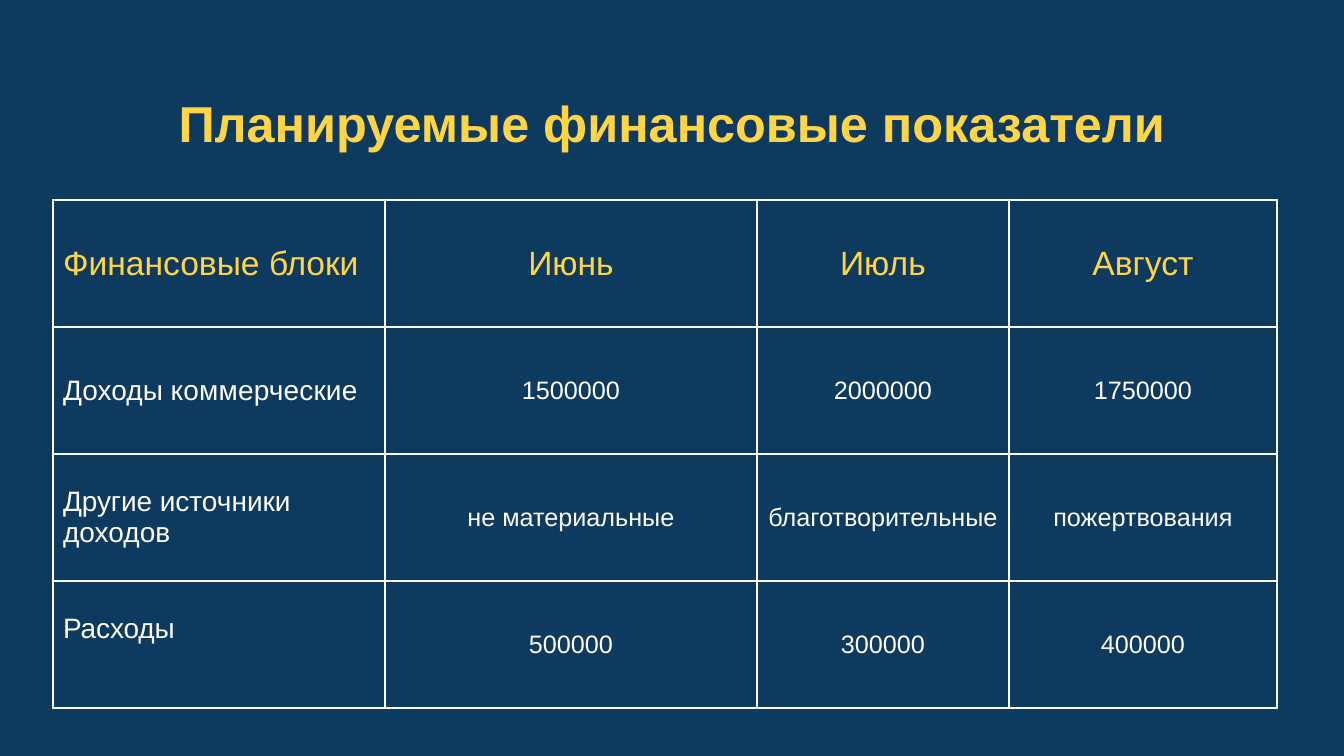
from pptx import Presentation, util as u
from pptx.dml.color import RGBColor
from pptx.enum import text
from pptx.oxml import parse_xml
from pptx.oxml.ns import nsdecls

TITLE = "Планируемые финансовые показатели"
ROWS = [
    ([("Финансовые ", 0), ("блоки", -10)], ["Июнь", "Июль", "Август"]),
    ([("Доходы ", 0), ("коммерческие", 10)], ["1500000", "2000000", "1750000"]),
    ([("Другие ", -10), ("источники доходов", 0)],
     ["не материальные", "благотворительные", "пожертвования"]),
    ([("Расходы", -10)], ["500000", "300000", "400000"]),
]
COLUMN_WIDTHS = [332, 372, 252, 268]
ROW_HEIGHT = 127
TABLE_LEFT, TABLE_TOP = 53, 200
EXPENSES_BOTTOM_MARGIN = 36
NAVY, YELLOW, WHITE = "0F3A5F", "FFD546", "FFFFFF"


def px(length):
    return u.Emu(round(length * 914400 / 100.8))


def color(value):
    return RGBColor.from_string(value)


def add_run(paragraph, words, size, ink, bold=False, spacing=0):
    run = paragraph.add_run()
    run.text = words
    run.font.name = "Arial"
    run.font.size = u.Pt(size)
    run.font.bold = bold
    run.font.color.rgb = color(ink)
    if spacing:
        run.font._element.set("spc", str(spacing))


def style_cell(cell):
    cell.vertical_anchor = text.MSO_ANCHOR.MIDDLE
    properties = cell._tc.get_or_add_tcPr()
    for side in ("lnL", "lnR", "lnT", "lnB"):
        properties.append(parse_xml(
            f'<a:{side} {nsdecls("a")} w="12700"><a:solidFill>'
            f'<a:srgbClr val="{WHITE}"/></a:solidFill></a:{side}>'))
    cell.fill.background()


deck = Presentation()
deck.slide_width, deck.slide_height = px(1344), px(756)
slide = deck.slides.add_slide(deck.slide_layouts[6])
slide.background.fill.solid()
slide.background.fill.fore_color.rgb = color(NAVY)

title = slide.shapes.add_textbox(0, px(94), px(1344), px(65)).text_frame
title.word_wrap = True
title.vertical_anchor = text.MSO_ANCHOR.MIDDLE
heading = title.paragraphs[0]
heading.alignment = text.PP_ALIGN.CENTER
heading.line_spacing = 0.9
add_run(heading, TITLE, 36, YELLOW, bold=True)

table = slide.shapes.add_table(
    len(ROWS), len(COLUMN_WIDTHS), px(TABLE_LEFT), px(TABLE_TOP),
    px(sum(COLUMN_WIDTHS)), px(ROW_HEIGHT * len(ROWS))).table
table.horz_banding = False
table.first_row = False
for column, width in zip(table.columns, COLUMN_WIDTHS):
    column.width = px(width)

for row_index, (label, months) in enumerate(ROWS):
    table.rows[row_index].height = px(ROW_HEIGHT)
    is_header = row_index == 0
    ink = YELLOW if is_header else WHITE
    for column_index, runs in enumerate([label] + [[(value, 0)] for value in months]):
        cell = table.cell(row_index, column_index)
        style_cell(cell)
        paragraph = cell.text_frame.paragraphs[0]
        is_label = column_index == 0
        paragraph.alignment = text.PP_ALIGN.LEFT if is_label else text.PP_ALIGN.CENTER
        size = 24 if is_header else 20 if is_label else 18
        for words, spacing in runs:
            add_run(paragraph, words, size, ink, spacing=spacing)

table.cell(len(ROWS) - 1, 0).margin_bottom = px(EXPENSES_BOTTOM_MARGIN)

deck.save("out.pptx")
